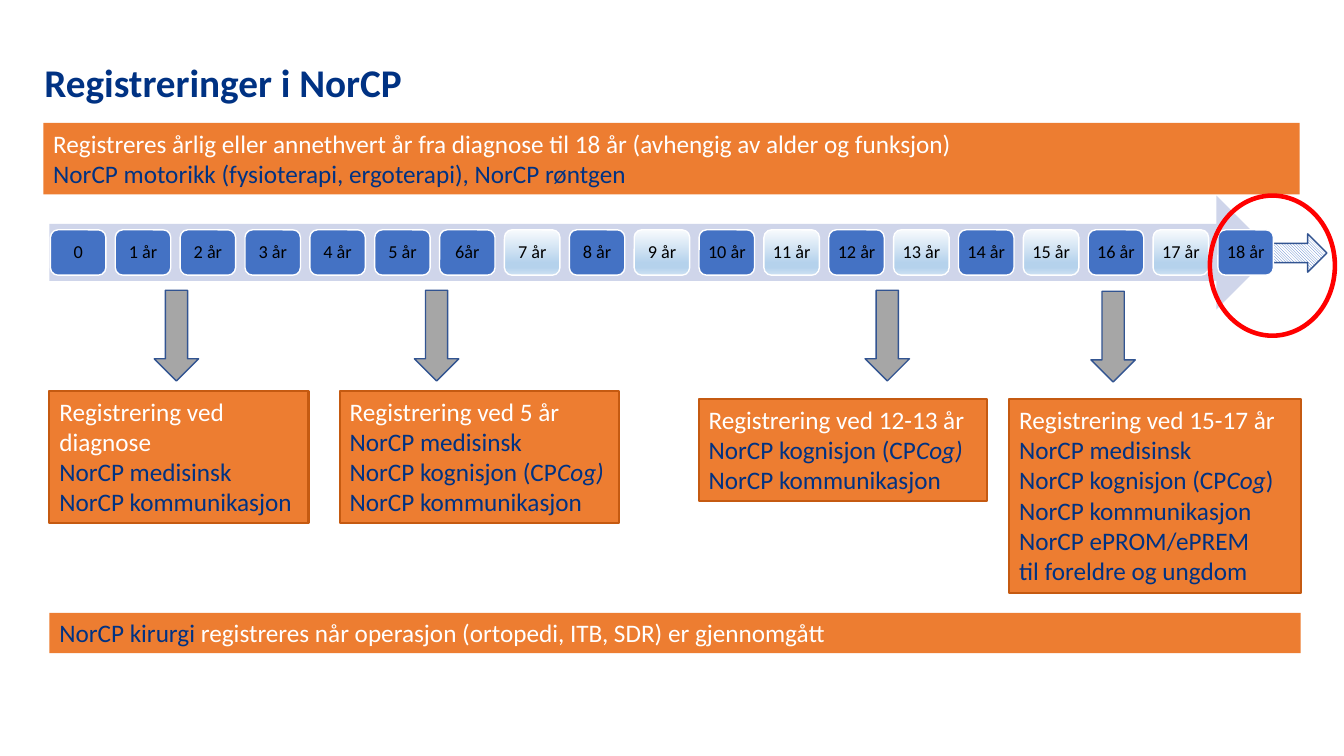
from lxml.etree import SubElement
from pptx import Presentation
from pptx.dml.color import RGBColor
from pptx.enum.dml import MSO_PATTERN
from pptx.enum.shapes import MSO_SHAPE
from pptx.enum.text import MSO_ANCHOR, MSO_AUTO_SIZE, PP_ALIGN
from pptx.oxml.ns import qn
from pptx.util import Inches, Pt

WHITE = RGBColor(0xFF, 0xFF, 0xFF)
BLACK = RGBColor(0x00, 0x00, 0x00)
NAVY = RGBColor(0x00, 0x32, 0x83)
BLUE = RGBColor(0x44, 0x72, 0xC4)
DARK_BLUE = RGBColor(0x32, 0x54, 0x91)
PALE_BLUE = RGBColor(0xCF, 0xD5, 0xEA)
ORANGE = RGBColor(0xED, 0x7D, 0x31)
DARK_ORANGE = RGBColor(0xC5, 0x5A, 0x11)
GREY = RGBColor(0xA6, 0xA6, 0xA6)
RED = RGBColor(0xFF, 0x00, 0x00)
LIGHT_STOPS = (
    (0, RGBColor(0xF7, 0xFA, 0xFD)),
    (74, RGBColor(0xB5, 0xD2, 0xEC)),
    (83, RGBColor(0xB5, 0xD2, 0xEC)),
    (100, RGBColor(0xCE, 0xE1, 0xF2)),
)


class SlideBuilder:
    font_name = "Calibri"

    def __init__(self, slide):
        self.slide = slide

    def add_text(self, paragraph, text, size, color, bold=False, italic=False):
        for index, line in enumerate(text.split("\n")):
            if index:
                paragraph.add_line_break()
            run = paragraph.add_run()
            run.text = line
            font = run.font
            font.name, font.size, font.color.rgb = self.font_name, Pt(size), color
            font.bold, font.italic = bold, italic

    def title(self, text, left, top, width, height):
        title = self.slide.shapes.title
        title.left, title.top = Inches(left), Inches(top)
        title.width, title.height = Inches(width), Inches(height)
        frame = title.text_frame
        frame.vertical_anchor = MSO_ANCHOR.TOP
        frame.auto_size = MSO_AUTO_SIZE.NONE
        paragraph = frame.paragraphs[0]
        paragraph.alignment = PP_ALIGN.LEFT
        self.add_text(paragraph, text, 28, NAVY, bold=True)

    def shape(self, kind, left, top, width, height, fill=None, line=None, weight=1):
        shape = self.slide.shapes.add_shape(
            kind, Inches(left), Inches(top), Inches(width), Inches(height))
        shape.shadow.inherit = False
        if fill is None:
            shape.fill.background()
        else:
            shape.fill.solid()
            shape.fill.fore_color.rgb = fill
        if line is None:
            shape.line.fill.background()
        else:
            shape.line.color.rgb = line
            shape.line.width = Pt(weight)
        return shape

    def box(self, left, top, width, height, paragraphs, line=None):
        shape = self.shape(MSO_SHAPE.RECTANGLE, left, top, width, height,
                           ORANGE, line, 1.5)
        frame = shape.text_frame
        frame.word_wrap = True
        frame.vertical_anchor = MSO_ANCHOR.TOP
        frame.auto_size = MSO_AUTO_SIZE.SHAPE_TO_FIT_TEXT
        for index, runs in enumerate(paragraphs):
            paragraph = frame.add_paragraph() if index else frame.paragraphs[0]
            paragraph.alignment = PP_ALIGN.LEFT
            for text, color, italic in runs:
                self.add_text(paragraph, text, 18, color, italic=italic)

    def age_cell(self, left, label, light):
        shape = self.shape(MSO_SHAPE.ROUNDED_RECTANGLE, left, 2.28, 0.55, 0.45,
                           BLUE, WHITE)
        if light:
            self.light_gradient(shape)
        frame = shape.text_frame
        frame.word_wrap = True
        frame.vertical_anchor = MSO_ANCHOR.MIDDLE
        frame.margin_left = frame.margin_right = Inches(0.02)
        frame.margin_top = frame.margin_bottom = Inches(0.05)
        paragraph = frame.paragraphs[0]
        paragraph.alignment = PP_ALIGN.CENTER
        paragraph.line_spacing = 0.9
        self.add_text(paragraph, label, 13, BLACK)

    def light_gradient(self, shape):
        shape.fill.gradient()
        shape.fill.gradient_angle = 270
        stops = shape.element.spPr.find(qn("a:gradFill")).find(qn("a:gsLst"))
        for stop in list(stops):
            stops.remove(stop)
        for position, color in LIGHT_STOPS:
            stop = SubElement(stops, qn("a:gs"), pos=str(position * 1000))
            SubElement(stop, qn("a:srgbClr"), val=str(color))

    def down_arrow(self, left, top):
        arrow = self.shape(MSO_SHAPE.RIGHT_ARROW, left, top, 0.9, 0.44,
                           GREY, DARK_BLUE)
        arrow.rotation = 90

    def hatched_arrow(self, left, top, width, height):
        arrow = self.shape(MSO_SHAPE.RIGHT_ARROW, left, top, width, height,
                           WHITE, DARK_BLUE)
        arrow.fill.patterned()
        arrow.fill.pattern = MSO_PATTERN.LIGHT_DOWNWARD_DIAGONAL
        arrow.fill.fore_color.rgb = BLUE
        arrow.fill.back_color.rgb = WHITE


def white(text):
    return [(text, WHITE, False)]


def navy(text):
    return [(text, NAVY, False)]


def main():
    presentation = Presentation()
    presentation.slide_width = Inches(13.33)
    presentation.slide_height = Inches(7.5)
    builder = SlideBuilder(presentation.slides.add_slide(presentation.slide_layouts[5]))

    builder.title("Registreringer i NorCP", 0.34, 0.53, 11.87, 0.63)
    builder.hatched_arrow(12.1, 2.32, 1.06, 0.38)
    builder.shape(MSO_SHAPE.RIGHT_ARROW, 0.49, 1.94, 12.14, 1.13, PALE_BLUE)

    first_left, last_left, last_age = 0.5, 12.08, 18
    step = (last_left - first_left) / last_age
    special_labels = {0: "0", 6: "6år"}
    for age in range(last_age + 1):
        label = special_labels.get(age, f"{age} år")
        builder.age_cell(first_left + age * step, label, age in range(7, 18, 2))

    for left, top in ((1.3, 3.11), (3.88, 3.11), (8.35, 3.11), (10.59, 3.12)):
        builder.down_arrow(left, top)

    medical = "NorCP medisinsk"
    cognition = "NorCP kognisjon (CP"
    communication = navy("NorCP kommunikasjon")
    medical_cognition = navy(f"{medical}\n{cognition}")
    cog_closed = [("Cog)", NAVY, True)]
    builder.box(0.49, 3.88, 2.57, 1.31, [
        white("Registrering ved diagnose"), navy(medical), communication,
    ], DARK_ORANGE)
    builder.box(3.37, 3.88, 2.77, 1.31, [
        white("Registrering ved 5 år"), medical_cognition + cog_closed, communication,
    ], DARK_ORANGE)
    builder.box(6.93, 3.96, 2.86, 1.01, [
        white("Registrering ved 12-13 år"), navy(cognition) + cog_closed, communication,
    ], DARK_ORANGE)
    builder.box(10.01, 3.96, 2.89, 1.92, [
        white("Registrering ved 15-17 år"),
        medical_cognition + [("Cog", NAVY, True)] + navy(")"),
        communication,
        navy("NorCP ePROM/ePREM\ntil foreldre og ungdom"),
    ], DARK_ORANGE)

    builder.box(0.43, 1.22, 12.46, 0.71, [
        white("Registreres årlig eller annethvert år fra diagnose til 18 år "
              "(avhengig av alder og funksjon)"),
        navy("NorCP motorikk (fysioterapi, ergoterapi), NorCP røntgen"),
    ])
    builder.box(0.49, 6.08, 12.41, 0.4, [
        navy("NorCP kirurgi ")
        + white("registreres når operasjon (ortopedi, ITB, SDR) er gjennomgått"),
    ])
    builder.shape(MSO_SHAPE.OVAL, 12, 1.94, 1.24, 1.39, line=RED, weight=3.25)

    presentation.save("out.pptx")


if __name__ == "__main__":
    main()
